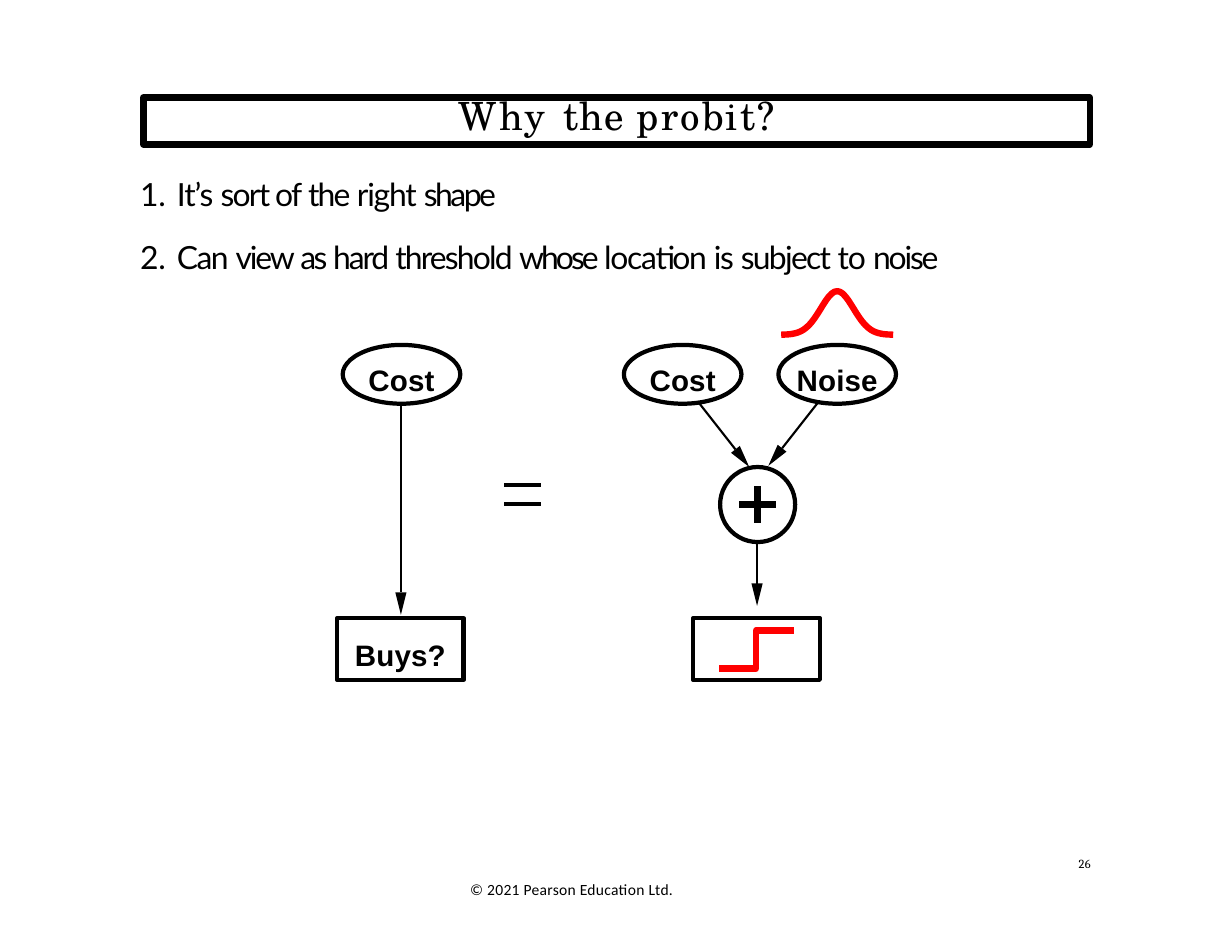
import math
from dataclasses import dataclass

from pptx import Presentation
from pptx import util as u
from pptx.dml.color import RGBColor
from pptx.enum import shapes as sh, text as tx
from pptx.oxml import xmlchemy as xc

COLS, ROWS = 110, 85


@dataclass(frozen=True)
class Theme:
    ink: str = "000000"
    paper: str = "FFFFFF"
    accent: str = "FF0000"
    title: float = 25
    body: float = 20.5
    label: float = 19
    foot: float = 10
    page: float = 8
    thin: float = 1.37
    mid: float = 2.73
    bold: float = 4.1


@dataclass(frozen=True)
class Box:
    col: float
    row: float
    wide: float
    high: float


@dataclass(frozen=True)
class Node:
    label: str
    box: Box
    kind: sh.MSO_SHAPE
    drop: float = 1.5


@dataclass(frozen=True)
class Arrow:
    start: tuple[float, float]
    end: tuple[float, float]


T = Theme()
deck = Presentation()
deck.slide_width, deck.slide_height = u.Inches(11), u.Inches(8.5)
slide = deck.slides.add_slide(deck.slide_layouts[6])


def across(col: float) -> int:
    return round(deck.slide_width * col / COLS)


def down(row: float) -> int:
    return round(deck.slide_height * row / ROWS)


def place(box: Box) -> tuple[int, int, int, int]:
    return across(box.col), down(box.row), across(box.wide), down(box.high)


def style(shape, width: float = 0, line: str = T.ink, fill: str = "") -> None:
    shape.shadow.inherit = False
    if fill:
        shape.fill.solid()
        shape.fill.fore_color.rgb = RGBColor.from_string(fill)
    else:
        shape.fill.background()
    if width:
        shape.line.color.rgb = RGBColor.from_string(line)
        shape.line.width = u.Pt(width)
    else:
        shape.line.fill.background()


def shape(kind: sh.MSO_SHAPE, box: Box, width: float, fill: str = ""):
    item = slide.shapes.add_shape(kind, *place(box))
    style(item, width, fill=fill)
    return item


def trace(points: list, closed: bool = False, **look) -> None:
    spots = [(across(x), down(y)) for x, y in points]
    pen = slide.shapes.build_freeform(*spots[0], scale=1.0)
    pen.add_line_segments(spots[1:], close=closed)
    style(pen.convert_to_shape(), **look)


def stroke(start: tuple, end: tuple, width: float) -> None:
    item = slide.shapes.add_connector(
        sh.MSO_CONNECTOR.STRAIGHT,
        across(start[0]), down(start[1]), across(end[0]), down(end[1]))
    item.line.color.rgb = RGBColor.from_string(T.ink)
    item.line.width = u.Pt(width)
    item._element.spPr.append(xc.OxmlElement("a:effectLst"))


def draw(arrow: Arrow, size: float = 2, half: float = 0.5) -> None:
    (x, y), (ex, ey) = arrow.start, arrow.end
    span = math.hypot(ex - x, ey - y)
    dx, dy = (ex - x) / span, (ey - y) / span
    bx, by = ex - size * dx, ey - size * dy
    stroke(arrow.start, (bx, by), T.thin)
    trace([arrow.end, (bx - half * dy, by + half * dx),
           (bx + half * dy, by - half * dx)], closed=True, fill=T.ink)


def number(para) -> None:
    props = para._p.get_or_add_pPr()
    props.set("marL", str(u.Inches(0.34)))
    props.set("indent", str(-u.Inches(0.33)))
    mark = xc.OxmlElement("a:buAutoNum")
    mark.set("type", "arabicPeriod")
    tabs, stop = xc.OxmlElement("a:tabLst"), xc.OxmlElement("a:tab")
    stop.set("pos", str(u.Inches(0.34)))
    stop.set("algn", "l")
    tabs.append(stop)
    props.extend([mark, tabs])


def write(paras: list, box: Box, *, size: float, font: str, host=None,
          bold: bool = False, align=tx.PP_ALIGN.LEFT, inset: tuple = (0, 0),
          lead: float = 0, gap: float = 0, listed: bool = False) -> None:
    host = host or slide.shapes.add_textbox(*place(box))
    frame = host.text_frame
    frame.word_wrap = True
    frame.vertical_anchor = tx.MSO_ANCHOR.TOP
    frame.margin_left = frame.margin_right = u.Inches(inset[0])
    frame.margin_top, frame.margin_bottom = u.Inches(inset[1]), 0
    for rank, runs in enumerate(paras):
        para = frame.add_paragraph() if rank else frame.paragraphs[0]
        if listed:
            number(para)
        para.alignment = align
        if lead:
            para.line_spacing = u.Pt(lead)
        if rank:
            para.space_before = u.Pt(gap)
        for words, track in runs:
            run = para.add_run()
            run.text = words
            run.font.size, run.font.name, run.font.bold = u.Pt(size), font, bold
            run.font.color.rgb = RGBColor.from_string(T.ink)
            run._r.get_or_add_rPr().set("spc", str(round(track * 100)))


def show(node: Node) -> None:
    fill = T.paper if node.kind == sh.MSO_SHAPE.OVAL else ""
    item = shape(node.kind, node.box, T.mid, fill)
    if node.label:
        spot = Box(node.box.col, node.box.row + node.drop, node.box.wide, 3.5)
        host = item if node.kind == sh.MSO_SHAPE.RECTANGLE else None
        write([[(node.label, 0.1)]], spot, size=T.label, font="Arial", host=host,
              bold=True, align=tx.PP_ALIGN.CENTER,
              inset=(0, node.drop / 10 if host else 0))


OVAL, RECT = sh.MSO_SHAPE.OVAL, sh.MSO_SHAPE.RECTANGLE
NODES = [Node("Cost", Box(col, 30.8, 10.5, 5.25), OVAL) for col in (30.6, 55.7)]
NODES += [
    Node("Noise", Box(69.5, 30.8, 10.5, 5.25), OVAL),
    Node("", Box(64.3, 41.7, 6.7, 6.7), OVAL),
    Node("Buys?", Box(30.1, 55.2, 11.3, 5.5), RECT, 1.7),
    Node("", Box(61.9, 55.2, 11.3, 5.5), RECT),
]
ARROWS = [
    Arrow((35.8, 34.6), (35.8, 54.9)),
    Arrow((61.8, 35.2), (66.9, 41.7)),
    Arrow((73.7, 35.1), (68.6, 41.6)),
    Arrow((67.6, 48.3), (67.6, 54.1)),
]
BODY = [
    [("It’s ", -0.7), ("sort of ", -1.1), ("the ", -1.2), ("right ", -0.8),
     ("shape", -1.6)],
    [("Can ", -1), ("view ", -1.4), ("as ", -1.6), ("hard ", -1.4),
     ("threshold ", -1.2), ("whose ", -1.9), ("location ", -0.8), ("is ", -0.9),
     ("subject ", -1.1), ("to ", -0.7), ("noise", -1.4)],
]

banner = Box(12.8, 8.7, 84.5, 4.2)
write([[("Why ", 2.1), ("the ", 0.8), ("probit?", 1.4)]], banner, size=T.title,
      font="TeX Gyre Schola", host=shape(RECT, banner, T.bold),
      align=tx.PP_ALIGN.CENTER, lead=26.4)
write(BODY, Box(12.4, 15.3, 72.6, 9.3), size=T.body, font="Lato",
      inset=(0, 0.03), gap=15.6, listed=True)

for arrow in ARROWS:
    draw(arrow)
for node in NODES:
    show(node)
for row in (43.3, 45):
    stroke((45, row), (48.3, row), T.mid)
stroke((67.65, 43.4), (67.65, 46.7), T.bold)
stroke((66, 45.05), (69.3, 45.05), T.bold)

bell = [(74.75 + 0.25 * i, 29.9 - 3.9 * math.exp(-(0.25 * i / 1.45) ** 2 / 2))
        for i in range(-20, 21)]
step = [(64.2, 59.7), (67.5, 59.7), (67.5, 56.3), (70.9, 56.3)]
for curve in (bell, step):
    trace(curve, width=T.bold, line=T.accent)

write([[("26", 0.2)]], Box(95.9, 76.6, 2.1, 1.4), size=T.page, font="Cambria",
      inset=(0.04, 0), lead=8.6)
write([[("© 2021 Pearson Education Ltd.", 0.2)]], Box(41, 78.1, 37.5, 4.4),
      size=T.foot, font="Calibri", inset=(0.1, 0.05))

deck.save("out.pptx")
